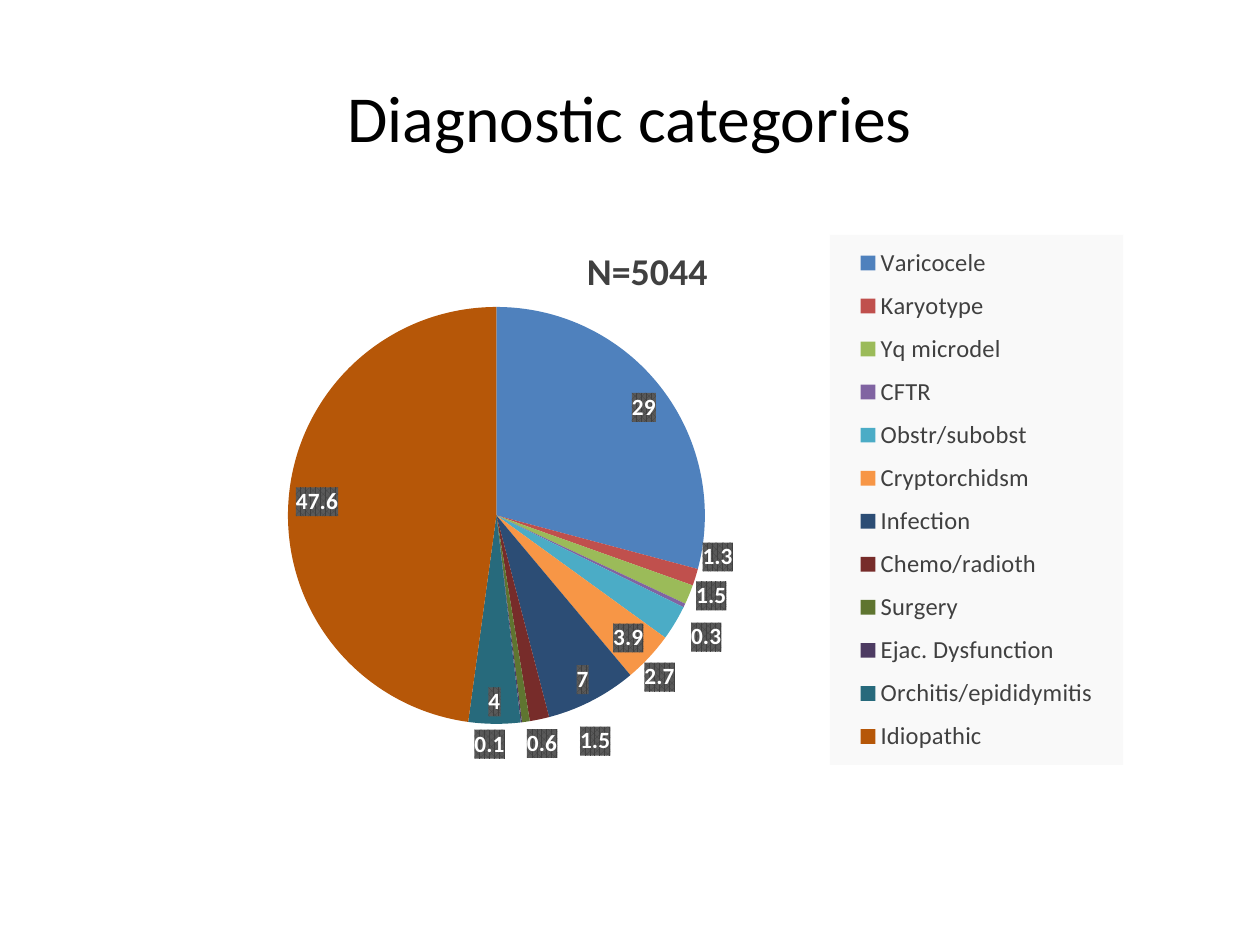
import lxml.etree
import pptx
import pptx.chart.data
import pptx.dml.color
import pptx.enum.chart
import pptx.enum.text
import pptx.oxml
import pptx.oxml.ns
import pptx.util

PX = 914400 // 126
TITLE = "Diagnostic categories"
CHART_TITLE = "N=5044"
FONT = "Calibri"

# category, percentage, slice colour, label offset in px (None: label inside the slice)
SLICES = [
    ("Varicocele", 29, "4F81BD", None),
    ("Karyotype", 1.3, "C0504D", (0, -37)),
    ("Yq microdel", 1.5, "9BBB59", (0, -16)),
    ("CFTR", 0.3, "8064A2", (0, 14)),
    ("Obstr/subobst", 2.7, "4BACC6", (-37, 36)),
    ("Cryptorchidsm", 3.9, "F79646", None),
    ("Infection", 7, "2C4D75", None),
    ("Chemo/radioth", 1.5, "772C2A", (39, 0)),
    ("Surgery", 0.6, "5F7530", (0, 0)),
    ("Ejac. Dysfunction", 0.1, "4D3B62", (-48, 0)),
    ("Orchitis/epididymitis", 4, "276A7C", None),
    ("Idiopathic", 47.6, "B65708", None),
]

# left, top, width, height in px
TITLE_BOX = (63, 38, 1134, 157)
CHART_BOX = (74, 202, 1134, 576)
PIE_BOX = (288, 307, 417, 417)
LEGEND_BOX = (830, 235, 293, 530)
CHART_TITLE_AT = (580, 237)

NS = 'xmlns:c="http://schemas.openxmlformats.org/drawingml/2006/chart" ' \
     'xmlns:a="http://schemas.openxmlformats.org/drawingml/2006/main"'
LEGEND_FILL = f'<c:spPr {NS}><a:solidFill><a:srgbClr val="F9F9F9"/></a:solidFill></c:spPr>'
LABEL_FILL = f"""<c:spPr {NS}><a:pattFill prst="pct75">
<a:fgClr><a:srgbClr val="404040"/></a:fgClr><a:bgClr><a:srgbClr val="595959"/></a:bgClr>
</a:pattFill></c:spPr>"""


def rgb(value):
    return pptx.dml.color.RGBColor.from_string(value)


def set_font(font, color, **values):
    font.color.rgb = rgb(color)
    for key, value in {"name": FONT, **values}.items():
        setattr(font, key, value)


def child(parent, name):
    return parent.find(pptx.oxml.ns.qn(name))


def layout(x, y, w=None, h=None, edge=True, inner=False):
    """Manual chart layout; lengths in px become fractions of the chart."""
    parts = [("layoutTarget", "inner")] if inner else []
    if edge:
        parts += [("xMode", "edge"), ("yMode", "edge")]
        x, y = x - CHART_BOX[0], y - CHART_BOX[1]
    for key, value, whole in zip("xywh", (x, y, w, h), CHART_BOX[2:] * 2):
        if value is not None:
            parts.append((key, f"{value / whole:.4f}"))
    body = "".join(f'<c:{key} val="{value}"/>' for key, value in parts)
    return pptx.oxml.parse_xml(
        f"<c:layout {NS}><c:manualLayout>{body}</c:manualLayout></c:layout>")


def place(parent, new, before):
    """Put the layout in front of the named child, replacing an old one."""
    old = child(parent, "c:layout")
    if old is not None:
        parent.remove(old)
    child(parent, before).addprevious(new)


def add_pie(s):
    data = pptx.chart.data.CategoryChartData()
    data.categories = [row[0] for row in SLICES]
    data.add_series("Series 1", [row[1] for row in SLICES])
    kind = pptx.enum.chart.XL_CHART_TYPE.PIE
    chart = s.shapes.add_chart(kind, *(v * PX for v in CHART_BOX), data).chart
    set_font(chart.font, "000000", size=pptx.util.Pt(10))

    chart.has_title = True
    tf = chart.chart_title.text_frame
    tf.text = CHART_TITLE
    set_font(tf.paragraphs[0].runs[0].font, "404040", size=pptx.util.Pt(21.6), bold=True)
    chart.chart_title.include_in_layout = False
    place(chart.chart_title._element, layout(*CHART_TITLE_AT), "c:overlay")

    chart.has_legend = True
    legend = chart.legend
    legend.position = pptx.enum.chart.XL_LEGEND_POSITION.RIGHT
    legend.include_in_layout = False
    set_font(legend.font, "404040", size=pptx.util.Pt(14))
    place(legend._element, layout(*LEGEND_BOX), "c:overlay")
    child(legend._element, "c:txPr").addprevious(pptx.oxml.parse_xml(LEGEND_FILL))

    plot = chart.plots[0]
    plot.vary_by_categories = True
    pie = plot._element
    place(pie.getparent(), layout(*PIE_BOX, inner=True), "c:pieChart")
    add_labels(plot.series[0])


def add_labels(series):
    position = pptx.enum.chart.XL_LABEL_POSITION
    series.data_labels.show_value = True
    for i, (_, _, color, offset) in enumerate(SLICES):
        point = series.points[i]
        point.format.fill.solid()
        point.format.fill.fore_color.rgb = rgb(color)
        label = point.data_label
        set_font(label.font, "FFFFFF", size=pptx.util.Pt(13.3), bold=True)
        label.position = position.OUTSIDE_END if offset else position.INSIDE_END
    labels = child(series._element, "c:dLbls")
    for label, row in zip(labels.findall(pptx.oxml.ns.qn("c:dLbl")), SLICES):
        old = child(label, "c:spPr")
        if old is not None:
            label.remove(old)
        child(label, "c:txPr").addprevious(pptx.oxml.parse_xml(LABEL_FILL))
        if row[3] and any(row[3]):
            place(label, layout(*row[3], edge=False), "c:spPr")
    leader = child(labels, "c:showLeaderLines")
    if leader is not None:
        leader.set("val", "0")


def main():
    prs = pptx.Presentation()
    prs.slide_width, prs.slide_height = 1260 * PX, 945 * PX
    s = prs.slides.add_slide(prs.slide_layouts[5])
    title = s.shapes.title
    title.left, title.top, title.width, title.height = (v * PX for v in TITLE_BOX)
    tf = title.text_frame
    tf.text = TITLE
    tf.vertical_anchor = pptx.enum.text.MSO_ANCHOR.MIDDLE
    p = tf.paragraphs[0]
    p.alignment = pptx.enum.text.PP_ALIGN.CENTER
    set_font(p.runs[0].font, "000000", size=pptx.util.Pt(37.5))
    add_pie(s)
    prs.save("out.pptx")


if __name__ == "__main__":
    main()
